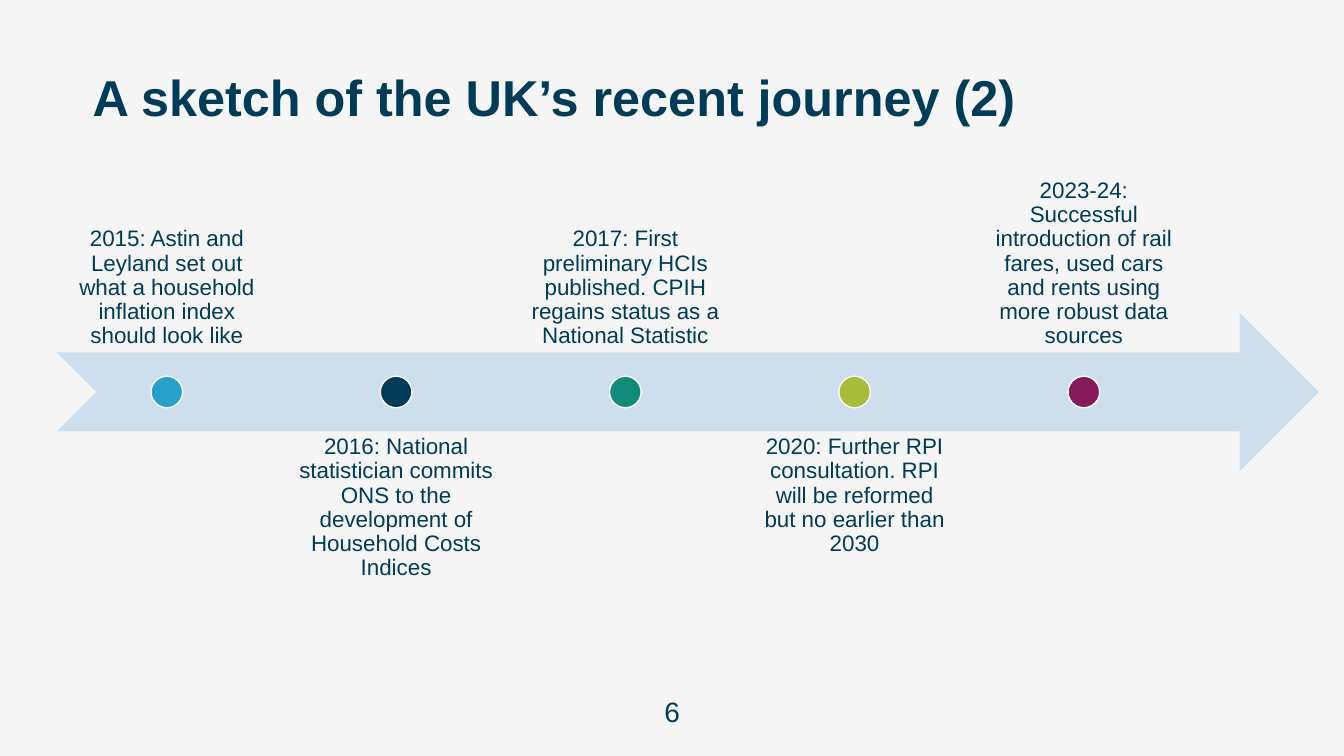
"""Build a timeline slide on the UK's recent inflation index journey."""
from dataclasses import dataclass

from pptx import Presentation
from pptx.dml.color import RGBColor
from pptx.enum.shapes import MSO_SHAPE as Preset
from pptx.enum.text import MSO_ANCHOR as Anchor, MSO_AUTO_SIZE as AutoSize, PP_ALIGN as Align
from pptx.shapes.autoshape import Shape
from pptx.slide import Slide
from pptx.util import Pt

NAVY = "003C57"
AXIS_Y = 280
ARROW_HEIGHT = 113
FIRST_CENTER = 119.2
STEP = 163.75
LABEL_WIDTH = 156.3
LABEL_HEIGHT = 90.8
LABEL_GAP = 22.4
DOT_SIZE = 22.6


@dataclass(frozen=True)
class Box:
    left: float
    top: float
    width: float
    height: float


@dataclass(frozen=True)
class TextStyle:
    size: float
    bold: bool = False
    align: Align = Align.CENTER
    anchor: Anchor = Anchor.TOP
    margins: tuple[float, float] = (8.64, 8.64)
    line_spacing: float = 1.0
    space_after: float = 0


@dataclass(frozen=True)
class Milestone:
    text: str
    color: str


MILESTONES = [
    Milestone("2015: Astin and Leyland set out what a household inflation index should look like", "27A0CC"),
    Milestone("2016: National statistician commits ONS to the development of Household Costs Indices", NAVY),
    Milestone("2017: First preliminary HCIs published. CPIH regains status as a National Statistic", "118C7B"),
    Milestone("2020: Further RPI consultation. RPI will be reformed but no earlier than 2030", "A8BD3A"),
    Milestone("2023-24: Successful introduction of rail fares, used cars and rents using more robust data sources",
              "871A5B"),
]


def rgb(color: str) -> RGBColor:
    return RGBColor.from_string(color)


def add_text(slide: Slide, box: Box, text: str, style: TextStyle) -> None:
    shape = slide.shapes.add_textbox(Pt(box.left), Pt(box.top), Pt(box.width), Pt(box.height))
    frame = shape.text_frame
    frame.word_wrap = True
    frame.auto_size = AutoSize.NONE
    frame.vertical_anchor = style.anchor
    horizontal, vertical = style.margins
    frame.margin_left = frame.margin_right = Pt(horizontal)
    frame.margin_top = frame.margin_bottom = Pt(vertical)
    paragraph = frame.paragraphs[0]
    paragraph.alignment = style.align
    paragraph.line_spacing = style.line_spacing
    paragraph.space_after = Pt(style.space_after)
    run = paragraph.add_run()
    run.text = text
    run.font.name = "Arial"
    run.font.size = Pt(style.size)
    run.font.bold = style.bold
    run.font.color.rgb = rgb(NAVY)


def add_filled(slide: Slide, preset: Preset, box: Box, color: str) -> Shape:
    shape = slide.shapes.add_shape(preset, Pt(box.left), Pt(box.top), Pt(box.width), Pt(box.height))
    shape.shadow.inherit = False
    shape.fill.solid()
    shape.fill.fore_color.rgb = rgb(color)
    shape.line.fill.background()
    return shape


def add_milestone(slide: Slide, index: int, milestone: Milestone) -> None:
    center = FIRST_CENTER + index * STEP
    above = index % 2 == 0
    top = AXIS_Y - LABEL_GAP - LABEL_HEIGHT if above else AXIS_Y + LABEL_GAP
    style = TextStyle(16, anchor=Anchor.BOTTOM if above else Anchor.TOP, line_spacing=0.9, space_after=5.6)
    add_text(slide, Box(center - LABEL_WIDTH / 2, top, LABEL_WIDTH, LABEL_HEIGHT), milestone.text, style)
    dot_box = Box(center - DOT_SIZE / 2, AXIS_Y - DOT_SIZE / 2, DOT_SIZE, DOT_SIZE)
    dot = add_filled(slide, Preset.OVAL, dot_box, milestone.color)
    dot.line.color.rgb = rgb("FFFFFF")
    dot.line.width = Pt(1)


def main() -> None:
    presentation = Presentation()
    presentation.slide_width = Pt(960)
    presentation.slide_height = Pt(540)
    slide = presentation.slides.add_slide(presentation.slide_layouts[6])
    slide.background.fill.solid()
    slide.background.fill.fore_color.rgb = rgb("F5F5F6")

    add_text(slide, Box(367.2, 492.5, 226, 28.8), "6", TextStyle(20, margins=(7.2, 3.6)))
    title_style = TextStyle(36, bold=True, align=Align.LEFT, margins=(0, 0), line_spacing=0.95, space_after=10)
    add_text(slide, Box(66.2, 50.4, 828, 41.8), "A sketch of the UK’s recent journey (2)", title_style)

    arrow_box = Box(40.5, AXIS_Y - ARROW_HEIGHT / 2, 901.5, ARROW_HEIGHT)
    add_filled(slide, Preset.NOTCHED_RIGHT_ARROW, arrow_box, "CDDFEC")
    for index, milestone in enumerate(MILESTONES):
        add_milestone(slide, index, milestone)
    presentation.save("out.pptx")


if __name__ == "__main__":
    main()
